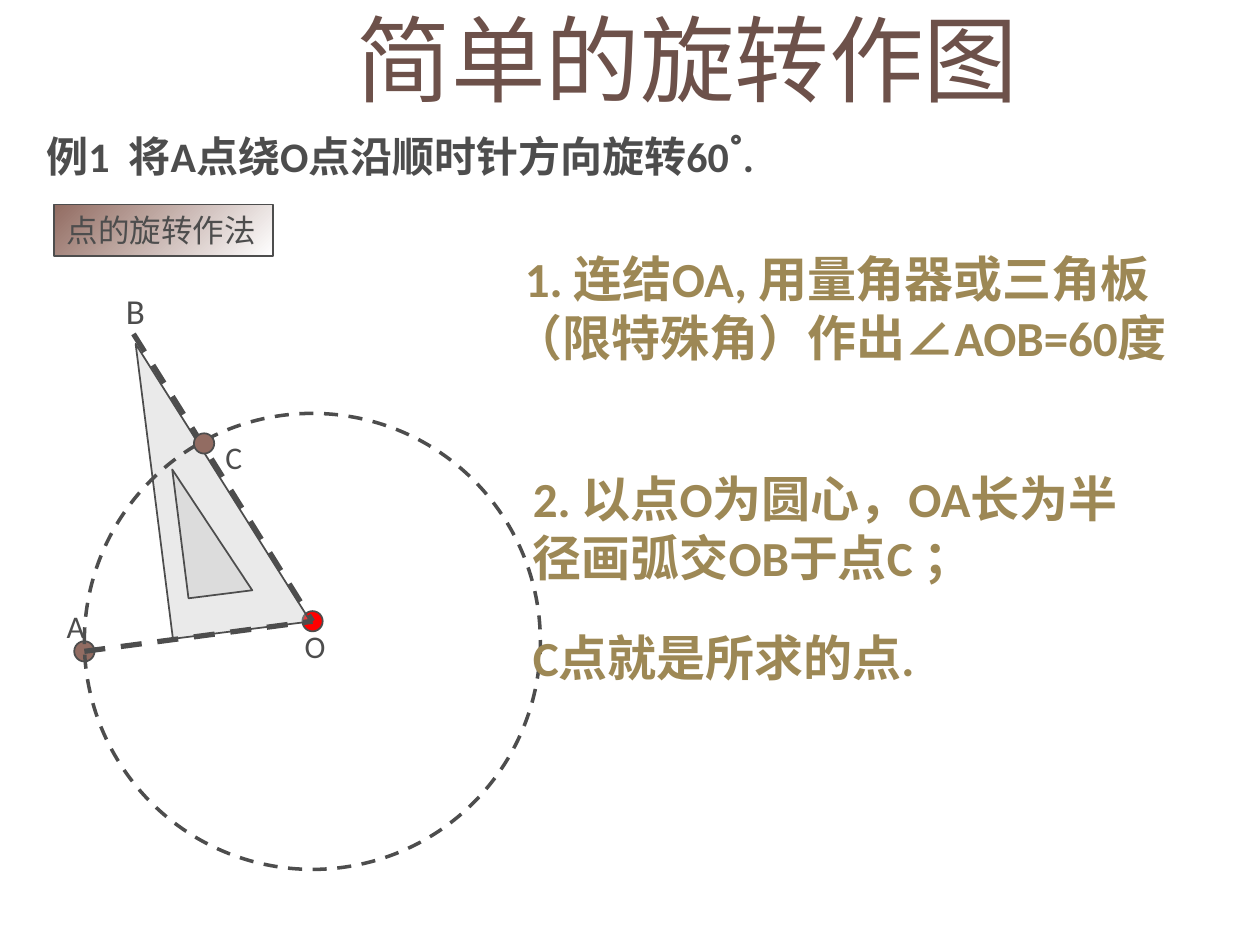
"""Build a geometry slide showing how to rotate point A about point O by 60 degrees."""
from lxml import etree
from pptx import Presentation
from pptx.dml.color import RGBColor
from pptx.enum.dml import MSO_LINE
from pptx.enum.shapes import MSO_CONNECTOR, MSO_SHAPE
from pptx.enum.text import MSO_ANCHOR, MSO_AUTO_SIZE, PP_ALIGN
from pptx.oxml.ns import qn
from pptx.util import Pt

OVAL, RECT, TRIANGLE = MSO_SHAPE.OVAL, MSO_SHAPE.RECTANGLE, MSO_SHAPE.RIGHT_TRIANGLE
STRAIGHT, DASH = MSO_CONNECTOR.STRAIGHT, MSO_LINE.DASH
MIDDLE, LEFT, GROW = MSO_ANCHOR.MIDDLE, PP_ALIGN.LEFT, MSO_AUTO_SIZE.SHAPE_TO_FIT_TEXT
INK = RGBColor(0x4D, 0x4D, 0x4D)
TITLE_BROWN = RGBColor(0x6D, 0x51, 0x4A)
BROWN = RGBColor(0x92, 0x6C, 0x62)
GOLD = RGBColor(0x9D, 0x88, 0x55)
RED = RGBColor(0xFF, 0x00, 0x00)
SILVER = RGBColor(0xC0, 0xC0, 0xC0)
WHITE = RGBColor(0xFF, 0xFF, 0xFF)


def add_text(shapes, box, text, size, color, bold=False, wrap=True):
    tb = shapes.add_textbox(*map(Pt, box))
    tf = tb.text_frame
    tf.word_wrap = wrap
    tf.auto_size = GROW
    p = tf.paragraphs[0]
    p.text = text
    font = p.runs[0].font
    font.name, font.size, font.bold = "Calibri", Pt(size), bold
    font.color.rgb = color
    return p


def add_outlined(shapes, kind, box, fill=None, width=1):
    sp = shapes.add_shape(kind, *map(Pt, box))
    sp.shadow.inherit = False
    sp.line.color.rgb = INK
    sp.line.width = Pt(width)
    if fill is None:
        sp.fill.background()
    else:
        sp.fill.solid()
        sp.fill.fore_color.rgb = fill
    return sp


prs = Presentation()
prs.slide_width, prs.slide_height = Pt(720), Pt(540)
s = prs.slides.add_slide(prs.slide_layouts[5])

title = s.shapes.title
title.left, title.top, title.width, title.height = Pt(184.3), Pt(-7.9), Pt(612), Pt(90)
tf = title.text_frame
tf.text = "简单的旋转作图"
tf.vertical_anchor = MIDDLE
tf.margin_left = Pt(19.5)
p = tf.paragraphs[0]
p.alignment = LEFT
p.line_spacing = 0.9
r = p.runs[0]
r.font.name, r.font.size = "Noto Sans CJK SC", Pt(54)
r.font.color.rgb = TITLE_BROWN
etree.SubElement(r.font._element, qn("a:ea")).set("typeface", "Noto Sans CJK SC")

DOT = 11.6
O, A, B, C = (178.6, 355), (48.2, 372.2), (76.3, 190.8), (116.6, 253.4)
for (x, y), color in ((A, BROWN), (O, RED)):
    add_outlined(s.shapes, OVAL, (x - DOT / 2, y - DOT / 2, DOT, DOT), color)
for label, x, y in (("A", 31, 343.4), ("O", 167, 355)):
    add_text(s.shapes, (x, y, 28, 29), label, 18, INK)

heading = add_outlined(s.shapes, RECT, (31, 116.9, 124.9, 29.3))
heading.fill.gradient()
heading.fill.gradient_angle = 315
for stop, color, position in zip(heading.fill.gradient_stops, (BROWN, WHITE), (0, 1)):
    stop.color.rgb = color
    stop.position = position
tf = heading.text_frame
tf.text = "点的旋转作法"
tf.auto_size = GROW
p = tf.paragraphs[0]
p.alignment = LEFT
font = p.runs[0].font
font.name, font.size = "Calibri", Pt(18)
font.color.rgb = INK

p = add_text(s.shapes, (19.4, 71.3, 462, 36), "例1  将A点绕O点沿顺时针方向旋转60", 24, INK, True)
for text, name in (("˚", "Karla"), (".", "Calibri")):
    r = p.add_run()
    r.text = text
    r.font.name, r.font.size, r.font.bold = name, Pt(24), True
    r.font.color.rgb = INK

p = add_text(s.shapes, (286.6, 138.6, 408, 74.2),
             "1. 连结OA, 用量角器或三角板（限特殊角）作出∠AOB=60度", 28, GOLD, True)
p._p.get_or_add_pPr().set("indent", str(Pt(6.3)))

set_square = s.shapes.add_group_shape()
for box in ((42.5, 236.2, 169.9, 79.2), (84.2, 284.4, 74.2, 36.7)):
    sp = add_outlined(set_square.shapes, TRIANGLE, box, SILVER)
    sp.rotation = 82.8
    sp._element.spPr.xfrm.set("flipH", "1")
    srgb = sp._element.spPr.find(qn("a:solidFill"))[0]
    etree.SubElement(srgb, qn("a:alpha")).set("val", "32000")

circle = add_outlined(s.shapes, OVAL, (48.2, 236.2, 260.6, 260.6), width=2)
circle.line.dash_style = DASH
for x, y in (A, B):
    ray = s.shapes.add_connector(STRAIGHT, Pt(x), Pt(y), *map(Pt, O))
    ray.line.color.rgb = INK
    ray.line.width = Pt(3)
    ray.line.dash_style = DASH
    etree.SubElement(ray._element.spPr, qn("a:effectLst"))

add_outlined(s.shapes, OVAL, (C[0] - DOT / 2, C[1] - DOT / 2, DOT, DOT), BROWN)
add_text(s.shapes, (121.7, 247, 28, 29), "C", 18, INK)
add_text(s.shapes, (297.4, 264.2, 360, 74.2),
         "2. 以点O为圆心，OA长为半径画弧交OB于点C ；", 28, GOLD, True)
add_text(s.shapes, (297.4, 355, 234, 41), "C点就是所求的点.", 28, GOLD, True, wrap=False)
add_text(s.shapes, (64.8, 162, 22.3, 31), "B", 20, INK)

prs.save("out.pptx")
